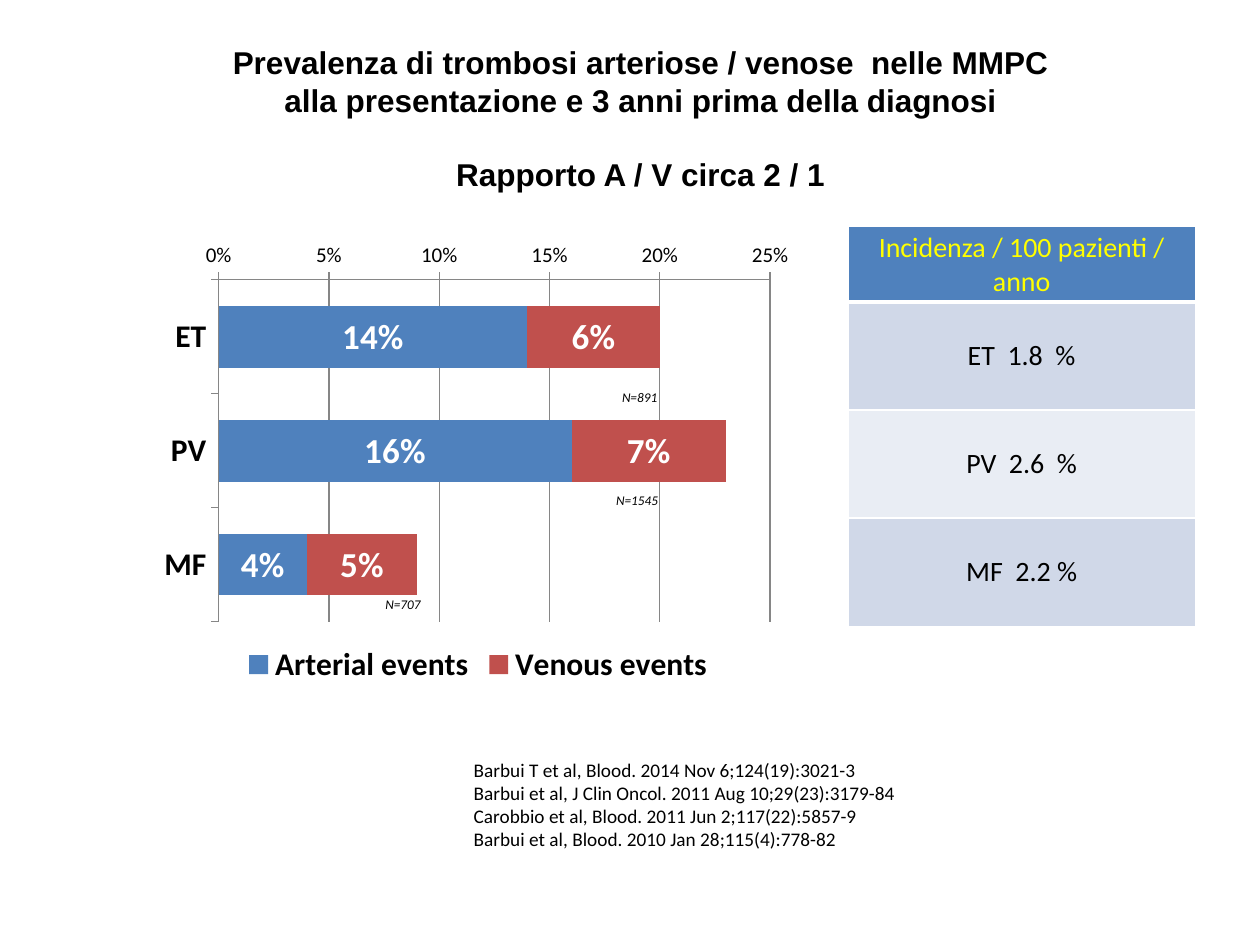
from dataclasses import dataclass

from lxml.etree import SubElement
from pptx import Presentation
from pptx.chart.data import CategoryChartData as ChartData
from pptx.dml.color import RGBColor
from pptx.enum.chart import XL_CHART_TYPE as ChartType
from pptx.enum.chart import XL_LEGEND_POSITION as LegendPosition
from pptx.enum.chart import XL_TICK_LABEL_POSITION as TickLabels
from pptx.enum.chart import XL_TICK_MARK as TickMark
from pptx.enum.text import MSO_ANCHOR as Anchor
from pptx.enum.text import PP_ALIGN as Align
from pptx.oxml import parse_xml
from pptx.oxml.ns import nsdecls, qn
from pptx.util import Cm, Pt


@dataclass(frozen=True)
class Theme:
    heading_font: str = "Arial"
    body_font: str = "Calibri"
    black: str = "000000"
    white: str = "FFFFFF"
    yellow: str = "FFFF00"
    axis: str = "868686"
    arterial: str = "4F81BD"
    venous: str = "C0504D"
    bands: tuple = ("D0D8E8", "E9EDF4")
    title: float = 18
    cell: float = 16
    category: float = 18
    scale: float = 12
    value: float = 20
    reference: float = 11
    sample: float = 7.6


THEME = Theme()

TITLE = ["Prevalenza di trombosi arteriose / venose  nelle MMPC",
         "alla presentazione e 3 anni prima della diagnosi",
         "Rapporto A / V circa 2 / 1"]
REFERENCES = ["Barbui T et al, Blood. 2014 Nov 6;124(19):3021-3",
              "Barbui et al, J Clin Oncol. 2011 Aug 10;29(23):3179-84",
              "Carobbio et al, Blood. 2011 Jun 2;117(22):5857-9",
              "Barbui et al, Blood. 2010 Jan 28;115(4):778-82"]
SAMPLES = [("N=891", 12.29, 7.72, 1.24),
           ("N=1545", 12.17, 9.8, 1.37),
           ("N=707", 7.52, 11.89, 1.24)]
DISEASES = ["ET", "PV", "MF"]
EVENTS = [("Arterial events", [0.14, 0.16, 0.04], THEME.arterial),
          ("Venous events", [0.06, 0.07, 0.05], THEME.venous)]
INCIDENCE = ["Incidenza / 100 pazienti / anno",
             "ET  1.8  %", "PV  2.6  %", "MF  2.2 %"]


def set_all(target, **values):
    for name, value in values.items():
        setattr(target, name, value)


def set_font(font, size, color=THEME.black, name=THEME.body_font, **values):
    set_all(font, size=Pt(size), name=name, **values)
    font.color.rgb = RGBColor.from_string(color)


def paint(fill, color):
    fill.solid()
    fill.fore_color.rgb = RGBColor.from_string(color)


def add_text(page, lines, left, top, width, height, wrap=True,
             align=Align.LEFT, **font):
    box = page.shapes.add_textbox(Cm(left), Cm(top), Cm(width), Cm(height))
    frame = box.text_frame
    frame.word_wrap = wrap
    for index, line in enumerate(lines):
        para = frame.add_paragraph() if index else frame.paragraphs[0]
        para.alignment = align
        span = para.add_run()
        span.text = line
        set_font(span.font, **font)
    return frame


def place_plot(chart, **fractions):
    """Fix the inner plot area as fractions of the chart frame."""
    plot_area = chart.plots[0]._element.getparent()
    layout = plot_area.find(qn("c:layout"))
    if layout is None:
        layout = parse_xml(f"<c:layout {nsdecls('c')}/>")
        plot_area.insert(0, layout)
    manual = SubElement(layout, qn("c:manualLayout"))
    settings = {"layoutTarget": "inner", "xMode": "edge", "yMode": "edge",
                **fractions}
    for tag, value in settings.items():
        SubElement(manual, qn(f"c:{tag}")).set("val", str(value))


def format_axis(axis, size, **font):
    set_all(axis, major_tick_mark=TickMark.OUTSIDE,
            minor_tick_mark=TickMark.NONE,
            tick_label_position=TickLabels.NEXT_TO_AXIS)
    set_font(axis.tick_labels.font, size, **font)
    paint(axis.format.line.fill, THEME.axis)


def add_events_chart(page):
    data = ChartData(number_format="0%")
    data.categories = DISEASES
    for name, values, _ in EVENTS:
        data.add_series(name, values)
    chart = page.shapes.add_chart(ChartType.BAR_STACKED, Cm(3.1), Cm(4.72),
                                  Cm(13.08), Cm(9.19), data).chart
    set_font(chart.font, 10)
    set_all(chart, has_title=False, has_legend=True)
    set_all(chart.legend, position=LegendPosition.BOTTOM,
            include_in_layout=False)
    set_font(chart.legend.font, THEME.category, bold=True)

    # Axes
    format_axis(chart.category_axis, THEME.category, bold=True)
    chart.category_axis.reverse_order = True
    scale = chart.value_axis
    format_axis(scale, THEME.scale, bold=False)
    set_all(scale, minimum_scale=0, maximum_scale=0.25, major_unit=0.05,
            has_major_gridlines=True)
    set_all(scale.tick_labels, number_format="0%",
            number_format_is_linked=False)
    paint(scale.major_gridlines.format.line.fill, THEME.axis)

    # Bars and their labels
    plot = chart.plots[0]
    set_all(plot, gap_width=84, overlap=100, vary_by_categories=False)
    for series, (_, _, color) in zip(plot.series, EVENTS):
        paint(series.format.fill, color)
        labels = series.data_labels
        set_all(labels, show_value=True, number_format="0%",
                number_format_is_linked=False)
        set_font(labels.font, THEME.value, THEME.white, bold=True)
    place_plot(chart, x=0.1, y=0.1, w=0.85, h=0.75)


def add_border(cell, side, points):
    line = SubElement(cell._tc.get_or_add_tcPr(), qn(f"a:ln{side}"),
                      w=str(Pt(points)))
    fill = SubElement(line, qn("a:solidFill"))
    SubElement(fill, qn("a:srgbClr"), val=THEME.white)


def add_incidence_table(page):
    header_height, row_height = 1.37, 2.18
    rows = len(INCIDENCE)
    table = page.shapes.add_table(
        rows, 1, Cm(17.09), Cm(4.57), Cm(7.01),
        Cm(header_height + row_height * (rows - 1))).table
    for index, text in enumerate(INCIDENCE):
        header = index == 0
        table.rows[index].height = Cm(header_height if header else row_height)
        cell = table.cell(index, 0)
        for side in "LRTB":
            after_header = (header and side == "B") or (index == 1 and side == "T")
            add_border(cell, side, 3 if after_header else 1)
        paint(cell.fill, THEME.arterial if header else THEME.bands[(index - 1) % 2])
        set_all(cell, vertical_anchor=Anchor.MIDDLE,
                margin_left=Cm(0.15), margin_right=Cm(0.15),
                margin_top=Cm(0.08), margin_bottom=Cm(0.08))
        para = cell.text_frame.paragraphs[0]
        para.alignment = Align.CENTER
        span = para.add_run()
        span.text = text
        set_font(span.font, THEME.cell,
                 THEME.yellow if header else THEME.black, bold=False)


def main():
    deck = Presentation()
    set_all(deck, slide_width=Cm(25.4), slide_height=Cm(19.05))
    page = deck.slides.add_slide(deck.slide_layouts[6])

    # Chart with sample sizes
    add_events_chart(page)
    for text, left, top, width in SAMPLES:
        add_text(page, [text], left, top, width, 0.58, wrap=False,
                 size=THEME.sample, italic=True)

    # Title, with the ratio set apart
    title = add_text(page, TITLE, 1.22, 0.74, 23.39, 3.33, align=Align.CENTER,
                     size=THEME.title, name=THEME.heading_font, bold=True)
    title.paragraphs[-1].space_before = Pt(21)

    # References and incidence
    add_text(page, REFERENCES, 9.3, 15.16, 11.84, 3.56, size=THEME.reference)
    add_incidence_table(page)

    deck.save("out.pptx")


if __name__ == "__main__":
    main()
